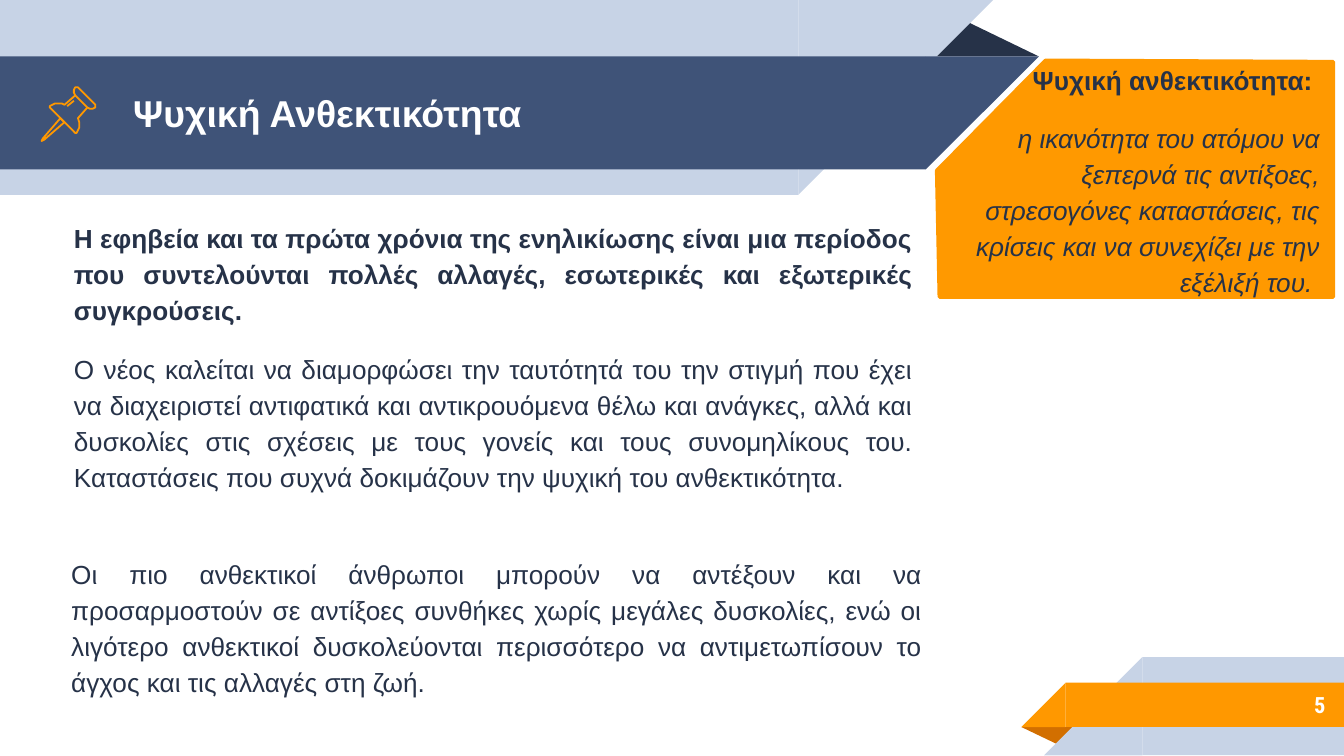
from dataclasses import dataclass

from pptx import Presentation
from pptx.dml.color import RGBColor
from pptx.enum.shapes import MSO_SHAPE
from pptx.enum.text import MSO_ANCHOR, PP_ALIGN
from pptx.util import Inches, Pt

RECTANGLE = MSO_SHAPE.RECTANGLE
TRIANGLE = MSO_SHAPE.ISOSCELES_TRIANGLE
CORNER = MSO_SHAPE.RIGHT_TRIANGLE
LEFT, RIGHT, JUSTIFY = PP_ALIGN.LEFT, PP_ALIGN.RIGHT, PP_ALIGN.JUSTIFY
TOP, MIDDLE = MSO_ANCHOR.TOP, MSO_ANCHOR.MIDDLE
TITLE_ONLY = 5


@dataclass(frozen=True)
class Theme:
    ink: str = "263248"
    navy: str = "3F5378"
    pale: str = "C7D3E6"
    orange: str = "FF9800"
    callout: str = "FF9900"
    rust: str = "D26F00"
    white: str = "FFFFFF"
    font: str = "Arial"
    number_font: str = "Roboto Condensed"
    title_size: int = 20
    body_size: int = 14
    number_size: int = 12


@dataclass(frozen=True)
class Piece:
    kind: int
    left: float
    top: float
    width: float
    height: float
    color: str
    flip: str = ""
    rotation: int = 0


@dataclass(frozen=True)
class Passage:
    text: str
    bold: bool = False
    italic: bool = False


THEME = Theme()

BANDS = [
    Piece(TRIANGLE, 6.88, 0.14, 0.85, 0.28, THEME.ink),
    Piece(RECTANGLE, 0, 0, 5.94, 1.45, THEME.pale),
    Piece(CORNER, 5.94, 0, 1.45, 1.45, THEME.pale, flip="flipV"),
    Piece(RECTANGLE, 0, 0.42, 6.89, 0.84, THEME.navy),
    Piece(CORNER, 6.89, 0.42, 0.84, 0.84, THEME.navy, flip="flipV"),
    Piece(TRIANGLE, 7.6, 5.41, 0.43, 0.14, THEME.rust, rotation=180),
    Piece(RECTANGLE, 8.5, 4.89, 1.5, 0.73, THEME.pale),
    Piece(CORNER, 7.77, 4.89, 0.73, 0.73, THEME.pale, flip="flipH"),
    Piece(RECTANGLE, 7.93, 5.08, 2.07, 0.33, THEME.orange),
    Piece(CORNER, 7.6, 5.08, 0.33, 0.33, THEME.orange, flip="flipH"),
]

PIN_NEEDLE = [(45, 88), (32, 103), (31, 105), (33, 104), (48, 91)]
PIN_HEAD = [(56, 71), (65, 80), (67, 81), (69, 81), (71, 80), (71, 78), (58, 65),
            (57, 65), (56, 65), (55, 67), (55, 69)]
PIN_BODY = [(56, 71), (48, 78), (46, 77), (44, 77), (41, 77), (39, 78), (37, 79),
            (37, 80), (38, 81), (55, 98), (56, 99), (57, 99), (58, 97), (59, 95),
            (59, 91), (58, 88), (65, 80)]
PIN_GLINT = [(50, 79), (55, 75)]
CALLOUT = [(697, 127), (778, 45), (992, 46), (992, 221), (699, 221)]

TITLE = [Passage("Ψυχική Ανθεκτικότητα", bold=True)]
ADOLESCENCE = [
    Passage("Η εφηβεία και τα πρώτα χρόνια της ενηλικίωσης είναι μια περίοδος που "
            "συντελούνται πολλές αλλαγές, εσωτερικές και εξωτερικές συγκρούσεις. ", bold=True),
    Passage("Ο νέος καλείται να διαμορφώσει την ταυτότητά του την στιγμή που έχει να "
            "διαχειριστεί αντιφατικά και αντικρουόμενα θέλω και ανάγκες, αλλά και δυσκολίες "
            "στις σχέσεις με τους γονείς και τους συνομηλίκους του. Καταστάσεις που συχνά "
            "δοκιμάζουν την ψυχική του ανθεκτικότητα."),
]
RESILIENT = [
    Passage("Οι πιο ανθεκτικοί άνθρωποι μπορούν να αντέξουν και να προσαρμοστούν σε "
            "αντίξοες συνθήκες χωρίς μεγάλες δυσκολίες, ενώ οι λιγότερο ανθεκτικοί "
            "δυσκολεύονται περισσότερο να αντιμετωπίσουν το άγχος και τις αλλαγές στη ζωή."),
]
DEFINITION = [
    Passage("Ψυχική ανθεκτικότητα: ", bold=True),
    Passage("η ικανότητα του ατόμου να ξεπερνά τις αντίξοες, στρεσογόνες καταστάσεις, τις "
            "κρίσεις και να συνεχίζει με την εξέλιξή του. ", italic=True),
]


def write(box, passages: list[Passage], *, size: int = THEME.body_size, font: str = THEME.font,
          color: str = THEME.ink, align=JUSTIFY, anchor=TOP, left: float = 0.18,
          top: float = 0.05, line: float = 1.15, gap: float = 6) -> None:
    """Fill a box with passages, one paragraph each."""
    frame = box.text_frame
    frame.word_wrap = True
    frame.vertical_anchor = anchor
    frame.margin_left, frame.margin_right = Inches(left), Inches(0.1)
    frame.margin_top = frame.margin_bottom = Inches(top)
    for index, passage in enumerate(passages):
        para = frame.add_paragraph() if index else frame.paragraphs[0]
        para.alignment = align
        para.line_spacing = line
        para.space_before = para.space_after = Pt(gap)
        span = para.add_run()
        span.text = passage.text
        span.font.name, span.font.size = font, Pt(size)
        span.font.bold, span.font.italic = passage.bold, passage.italic
        span.font.color.rgb = RGBColor.from_string(color)


def add_text_box(page, left: float, top: float, width: float, height: float):
    """Add an empty text box measured in inches."""
    return page.shapes.add_textbox(Inches(left), Inches(top), Inches(width), Inches(height))


def draw_piece(page, piece: Piece) -> None:
    """Draw one flat piece of a ribbon."""
    shape = page.shapes.add_shape(piece.kind, Inches(piece.left), Inches(piece.top),
                                  Inches(piece.width), Inches(piece.height))
    shape.shadow.inherit = False
    shape.fill.solid()
    shape.fill.fore_color.rgb = RGBColor.from_string(piece.color)
    shape.line.fill.background()
    shape.rotation = piece.rotation
    if piece.kind == TRIANGLE:
        shape.adjustments[0] = 0.32
    if piece.flip:
        shape._element.spPr.xfrm.set(piece.flip, "1")


def draw_outline(page, points: list[tuple[int, int]], color: str, width: float,
                 closed: bool = True, filled: bool = False):
    """Draw a freeform through points given in hundredths of an inch."""
    builder = page.shapes.build_freeform(*points[0], scale=Inches(0.01))
    builder.add_line_segments(points[1:], close=closed)
    shape = builder.convert_to_shape()
    shape.shadow.inherit = False
    shape.line.color.rgb = RGBColor.from_string(color)
    shape.line.width = Pt(width)
    if filled:
        shape.fill.solid()
        shape.fill.fore_color.rgb = RGBColor.from_string(color)
    else:
        shape.fill.background()
    return shape


def main() -> None:
    """Build the slide and save the deck."""
    deck = Presentation()
    deck.slide_width, deck.slide_height = Inches(10), Inches(10 * 9 / 16)
    page = deck.slides.add_slide(deck.slide_layouts[TITLE_ONLY])
    for piece in BANDS:
        draw_piece(page, piece)

    title = page.shapes.title
    title.left, title.top = Inches(0.89), Inches(0.42)
    title.width, title.height = Inches(6.01), Inches(0.84)
    write(title, TITLE, size=THEME.title_size, color=THEME.white, align=LEFT,
          anchor=MIDDLE, left=0.1, line=1, gap=0)
    page.shapes._spTree.append(title._element)

    write(add_text_box(page, 0.37, 1.62, 6.52, 2.69), ADOLESCENCE, top=0)
    write(add_text_box(page, 8.33, 5.07, 1.63, 0.35), [Passage("5", bold=True)],
          size=THEME.number_size, font=THEME.number_font, color=THEME.white,
          align=RIGHT, anchor=MIDDLE, left=0.1, line=1, gap=0)

    for points, closed in ((PIN_NEEDLE, True), (PIN_HEAD, True),
                           (PIN_BODY, False), (PIN_GLINT, False)):
        draw_outline(page, points, THEME.orange, 0.96, closed)

    callout = draw_outline(page, CALLOUT, THEME.callout, 2, filled=True)
    write(callout, DEFINITION, align=RIGHT, anchor=MIDDLE)
    write(add_text_box(page, 0.35, 4.07, 6.61, 1.18), RESILIENT)
    deck.save("out.pptx")


if __name__ == "__main__":
    main()
